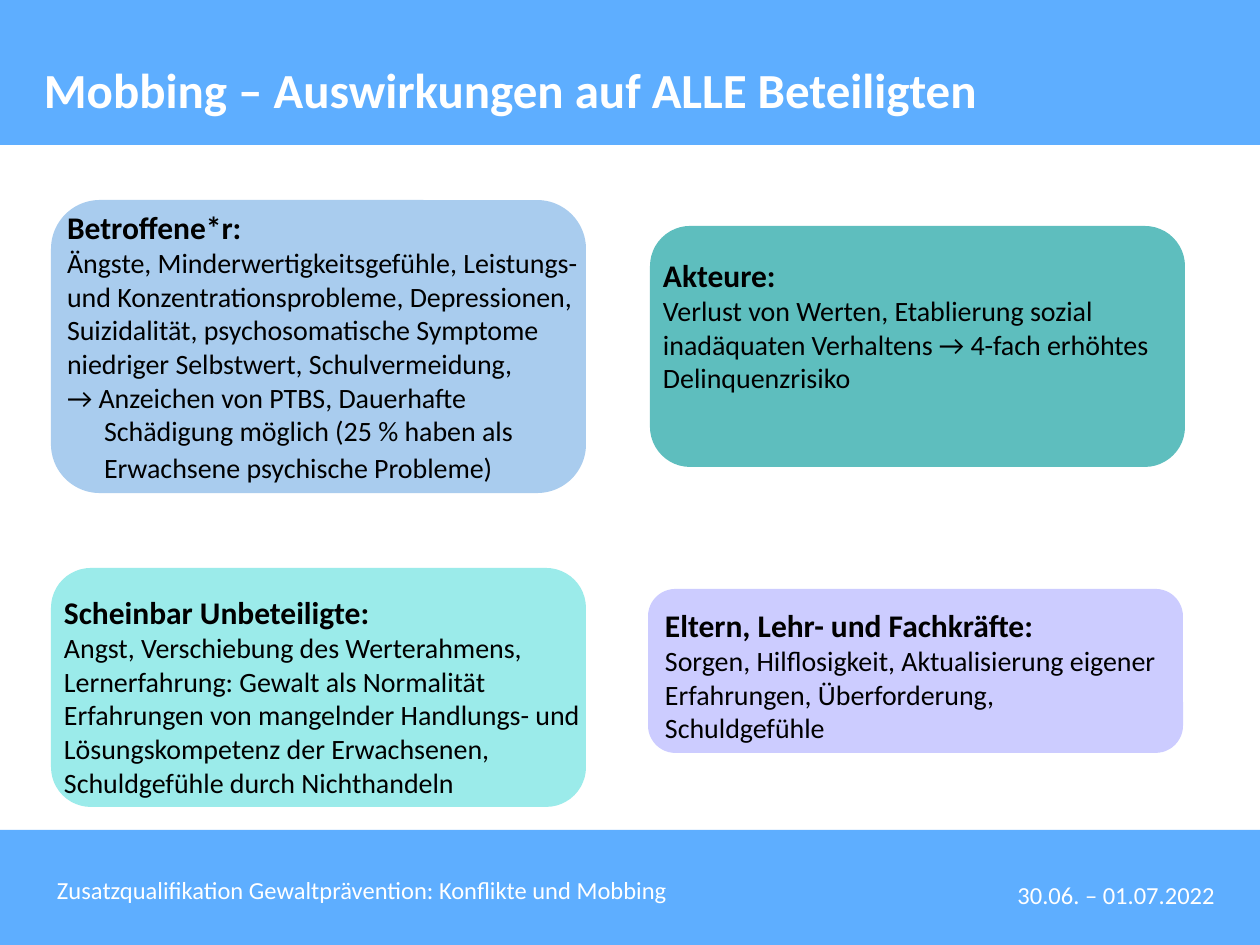
"""Builds a slide on how bullying affects everyone involved."""
from lxml.etree import SubElement
from pptx import Presentation
from pptx.dml.color import RGBColor
from pptx.enum.shapes import MSO_SHAPE
from pptx.enum.text import MSO_ANCHOR, PP_ALIGN
from pptx.oxml.ns import qn
from pptx.util import Pt

WIDE, HIGH = 1260, 945
BLUE, WHITE, BLACK = "3399FF", "FFFFFF", "000000"


def emu(px):
    return round(px * 914400 / 126)


def tint(text):
    return RGBColor.from_string(text)


class Deck:
    font = "Calibri"

    def __init__(self):
        self.file = Presentation()
        self.file.slide_width, self.file.slide_height = emu(WIDE), emu(HIGH)
        self.slide = self.file.slides.add_slide(self.file.slide_layouts[6])

    def block(self, box, fill, alpha=100, kind=MSO_SHAPE.RECTANGLE, home=None):
        shapes = (home or self.slide).shapes
        shape = shapes.add_shape(kind, *map(emu, box))
        shape.shadow.inherit = False
        shape.fill.solid()
        shape.fill.fore_color.rgb = tint(fill)
        shape.line.fill.background()
        if alpha < 100:
            color = shape.fill._xPr.find(qn("a:solidFill"))[0]
            SubElement(color, qn("a:alpha")).set("val", str(alpha * 1000))

    def frame(self, box, pad=(13, 6, 13, 6), anchor=MSO_ANCHOR.TOP, home=None):
        shapes = (home or self.slide).shapes
        frame = shapes.add_textbox(*map(emu, box)).text_frame
        frame.word_wrap = True
        frame.vertical_anchor = anchor
        (frame.margin_left, frame.margin_top,
         frame.margin_right, frame.margin_bottom) = map(emu, pad)
        return frame

    def run(self, para, text, size, color, bold=False):
        for i, line in enumerate(text.split("\n")):
            if i:
                para.add_line_break()
            run = para.add_run()
            run.text = line
            run.font.name = self.font
            run.font.size = Pt(size)
            run.font.bold = bold
            run.font.color.rgb = tint(color)

    def label(self, box, text, size, bold=False, align=PP_ALIGN.LEFT, **look):
        para = self.frame(box, **look).paragraphs[0]
        para.alignment = align
        self.run(para, text, size, WHITE, bold)

    def card(self, box, fill, alpha, area, head, body, hang=""):
        group = self.slide.shapes.add_group_shape()
        self.block(box, fill, alpha, MSO_SHAPE.ROUNDED_RECTANGLE, group)
        frame = self.frame(area, home=group)
        self.run(frame.paragraphs[0], head, 18, BLACK, True)
        for text in body:
            self.run(frame.add_paragraph(), text, 16, BLACK)
        if hang:
            para = frame.add_paragraph()
            props = para._p.get_or_add_pPr()
            props.set("marL", str(emu(37)))
            props.set("indent", str(-emu(37)))
            self.run(para, hang, 16, BLACK)
            self.run(para, " ", 18, BLACK)


def main():
    deck = Deck()
    deck.block((0, 0, WIDE, 145), BLUE, 79)
    deck.block((0, 830, WIDE, 115), BLUE, 79)
    deck.label((44, 869, 684, 50),
               "Zusatzqualifikation Gewaltprävention: Konflikte und Mobbing", 14)
    deck.label((600, 870, 615, 50), "30.06. – 01.07.2022", 14,
               align=PP_ALIGN.RIGHT, pad=(0, 0, 0, 0), anchor=MSO_ANCHOR.MIDDLE)
    deck.label((44, 38, 973, 90), "Mobbing – Auswirkungen auf ALLE Beteiligten",
               28, True, pad=(0, 10, 0, 10), anchor=MSO_ANCHOR.BOTTOM)
    deck.card((51, 200, 535, 293), "A9CCEE", 100, (54, 202, 551, 292),
              "Betroffene*r:",
              ["Ängste, Minderwertigkeitsgefühle, Leistungs- und "
               "Konzentrationsprobleme, Depressionen, Suizidalität, "
               "psychosomatische Symptome\n"
               "niedriger Selbstwert, Schulvermeidung,"],
              "→ Anzeichen von PTBS, Dauerhafte Schädigung möglich "
              "(25 % haben als Erwachsene psychische Probleme)")
    deck.card((650, 226, 535, 241), "009999", 63, (650, 250, 551, 152),
              "Akteure:",
              ["Verlust von Werten, Etablierung sozial inadäquaten Verhaltens "
               "→ 4-fach erhöhtes Delinquenzrisiko"])
    deck.card((51, 568, 535, 239), "54DEDB", 58, (51, 587, 551, 220),
              "Scheinbar Unbeteiligte:",
              ["Angst, Verschiebung des Werterahmens, Lernerfahrung: "
               "Gewalt als Normalität\n"
               "Erfahrungen von mangelnder Handlungs- und Lösungskompetenz "
               "der Erwachsenen, Schuldgefühle durch Nichthandeln"])
    deck.card((648, 589, 535, 164), "CCCCFF", 100, (652, 600, 551, 186),
              "Eltern, Lehr- und Fachkräfte:",
              ["Sorgen, Hilflosigkeit, Aktualisierung eigener Erfahrungen, "
               "Überforderung,", "Schuldgefühle"])
    deck.file.save("out.pptx")


if __name__ == "__main__":
    main()
